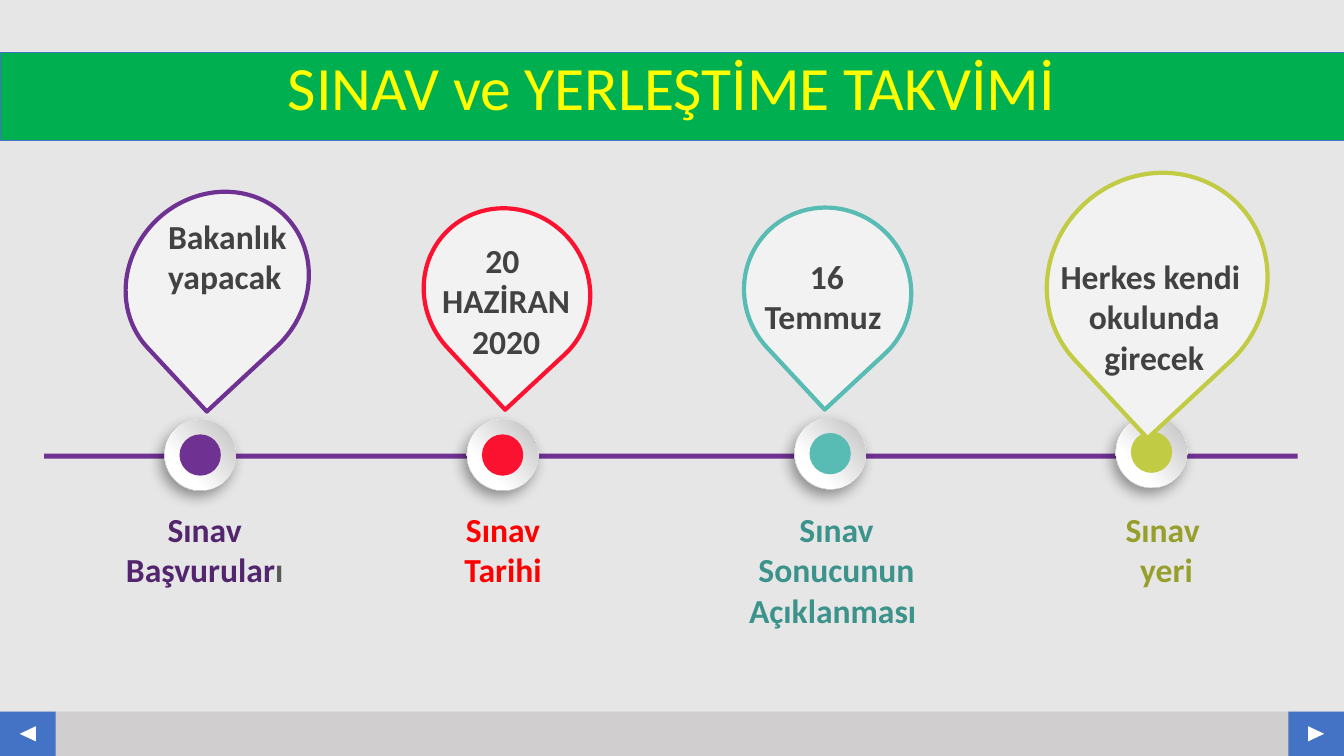
from lxml.etree import SubElement
from pptx import Presentation
from pptx.dml.color import RGBColor
from pptx.enum.shapes import MSO_SHAPE
from pptx.enum.text import MSO_ANCHOR, MSO_AUTO_SIZE, PP_ALIGN
from pptx.oxml.ns import qn
from pptx.util import Pt

COLORS = {
    "background": "E7E6E6", "footer": "D0CECE", "button": "4472C4",
    "white": "FFFFFF", "banner": "00B050", "title": "FFFF00",
    "purple": "6F3293", "red": "FA1230", "teal": "58BBB4", "olive": "C2CB44",
    "pin": "F2F2F2", "pin text": "424242", "rim": "B8B8B8", "coin": "BFBFBF",
    "purple label": "53256E", "red label": "FF0000",
    "teal label": "3C938C", "olive label": "979F2C",
    "gray label": "595959", "shadow": "000000",
}
TITLE = "SINAV ve YERLEŞTİME TAKVİMİ"
STEPS = [
    {"color": "purple", "center": (143, 325),
     "pin": (87.1, 139.7, 136.1, 124.6),
     "note": ["Bakanlık", "yapacak"], "note box": (113, 150.5, 140.4, 69),
     "align": PP_ALIGN.LEFT, "wrap": True,
     "label": [[("Sınav Başvurular", "purple label"), ("ı", "gray label")]],
     "label box": (77.8, 360, 136.8, 65.5)},
    {"color": "red", "center": (359, 325),
     "pin": (303.8, 147.6, 116.6, 121.7),
     "note": ["20 ", "HAZİRAN", "2020"], "note box": (308.2, 167.8, 106.6, 94.3),
     "align": PP_ALIGN.CENTER, "wrap": False,
     "label": [[("Sınav Tarihi", "red label")]],
     "label box": (298.8, 360, 121, 65.5)},
    {"color": "teal", "center": (593, 324),
     "pin": (532.1, 147.6, 118.1, 121),
     "note": [" 16", "Temmuz"], "note box": (538.6, 179.3, 98.6, 94.3),
     "align": PP_ALIGN.CENTER, "wrap": False,
     "label": [[("Sınav Sonucunun Açıklanması ", "teal label")]],
     "label box": (519.8, 360, 155.5, 94.3)},
    {"color": "olive", "center": (822.5, 323),
     "pin": (745.9, 125.3, 161.3, 153.4),
     "note": ["Herkes kendi ", "okulunda", "girecek"],
     "note box": (749.5, 179.3, 149.8, 94.3),
     "align": PP_ALIGN.CENTER, "wrap": False,
     "label": [[("Sınav", "olive label")], [(" yeri", "olive label")]],
     "label box": (774.7, 360, 111.6, 65.5)},
]
WIDTH, HEIGHT = 960, 540
FOOTER_HEIGHT, BUTTON_WIDTH = 31.7, 39.7
ARROW_WIDTH, ARROW_HEIGHT = 10.8, 11.5
RIM_SIZE, COIN_SIZE, DOT_SIZE = 51, 50.5, 29.5
BODY_FONT = {"name": "Calibri", "size": Pt(24), "bold": True}
TITLE_FONT = {"name": "Calibri", "size": Pt(44), "bold": False}


def rgb(name):
    return RGBColor.from_string(COLORS[name])


def add_figure(kind, box, fill=None, line=None, rotation=0):
    figure = page.shapes.add_shape(kind, *map(Pt, box))
    figure.shadow.inherit = False
    figure.rotation = rotation
    if fill:
        figure.fill.solid()
        figure.fill.fore_color.rgb = rgb(fill)
    if line:
        figure.line.color.rgb = rgb(line)
        figure.line.width = Pt(3)
    else:
        figure.line.fill.background()
    return figure


def add_disc(center, size, fill=None, rotation=0, stops=()):
    box = (center[0] - size / 2, center[1] - size / 2, size, size)
    disc = add_figure(MSO_SHAPE.OVAL, box, fill, rotation=rotation)
    if stops:
        disc.fill.gradient()
        disc.fill.gradient_angle = 315
        for stop, (position, color) in zip(disc.fill.gradient_stops, stops):
            stop.position = position
            stop.color.rgb = rgb(color)
    return disc


def add_soft_shadow(figure):
    effects = figure.element.spPr.find(qn("a:effectLst"))
    shadow = SubElement(effects, qn("a:outerShdw"), blurRad=str(Pt(10)),
                        dist=str(Pt(5)), dir=str(123 * 60000), rotWithShape="0")
    color = SubElement(shadow, qn("a:srgbClr"), val=COLORS["shadow"])
    SubElement(color, qn("a:alpha"), val="39000")


def add_span(para, text, color, font):
    span = para.add_run()
    span.text = text
    span.font.color.rgb = rgb(color)
    for name, value in font.items():
        setattr(span.font, name, value)


def add_text(box, lines, align=PP_ALIGN.CENTER, wrap=True):
    frame = page.shapes.add_textbox(*map(Pt, box)).text_frame
    frame.word_wrap = wrap
    frame.auto_size = MSO_AUTO_SIZE.SHAPE_TO_FIT_TEXT
    for index, line in enumerate(lines):
        para = frame.add_paragraph() if index else frame.paragraphs[0]
        para.alignment = align
        for text, color in line:
            add_span(para, text, color, BODY_FONT)


deck = Presentation()
deck.slide_width, deck.slide_height = Pt(WIDTH), Pt(HEIGHT)
page = deck.slides.add_slide(deck.slide_layouts[5])
page.background.fill.solid()
page.background.fill.fore_color.rgb = rgb("background")

title = page.shapes.title
banner = {"left": 0, "top": 37.4, "width": WIDTH, "height": 62.6}
for name, value in banner.items():
    setattr(title, name, Pt(value))
title.fill.solid()
title.fill.fore_color.rgb = rgb("banner")
title.line.color.rgb = rgb("button")
title.line.width = Pt(0.5)
title.text_frame.vertical_anchor = MSO_ANCHOR.TOP
title.text_frame.auto_size = MSO_AUTO_SIZE.NONE
heading = title.text_frame.paragraphs[0]
heading.alignment = PP_ALIGN.CENTER
heading.line_spacing = 0.9
add_span(heading, TITLE, "title", TITLE_FONT)

footer_top = HEIGHT - FOOTER_HEIGHT
add_figure(MSO_SHAPE.RECTANGLE, (0, footer_top, WIDTH, FOOTER_HEIGHT), "footer")
for left, turn in ((0, 270), (WIDTH - BUTTON_WIDTH, 90)):
    add_figure(MSO_SHAPE.RECTANGLE,
               (left, footer_top, BUTTON_WIDTH, FOOTER_HEIGHT), "button")
    arrow_box = (left + (BUTTON_WIDTH - ARROW_WIDTH) / 2,
                 footer_top + (FOOTER_HEIGHT - ARROW_HEIGHT) / 2,
                 ARROW_WIDTH, ARROW_HEIGHT)
    add_figure(MSO_SHAPE.ISOSCELES_TRIANGLE, arrow_box, "white", rotation=turn)

add_figure(MSO_SHAPE.RECTANGLE, (31.5, 324, 895.5, 3.6), "purple")
for step in STEPS:
    center, color = step["center"], step["color"]
    rim = add_disc(center, RIM_SIZE, rotation=62.3,
                   stops=((0.17, "white"), (0.88, "rim")))
    add_soft_shadow(rim)
    add_disc(center, COIN_SIZE, rotation=273,
             stops=((0.29, "white"), (0.98, "coin")))
    add_disc(center, DOT_SIZE, color)
    add_figure(MSO_SHAPE.TEAR, step["pin"], "pin", color, 137.1)
    note = [[(text, "pin text")] for text in step["note"]]
    add_text(step["note box"], note, step["align"], step["wrap"])
    add_text(step["label box"], step["label"])

deck.save("out.pptx")
